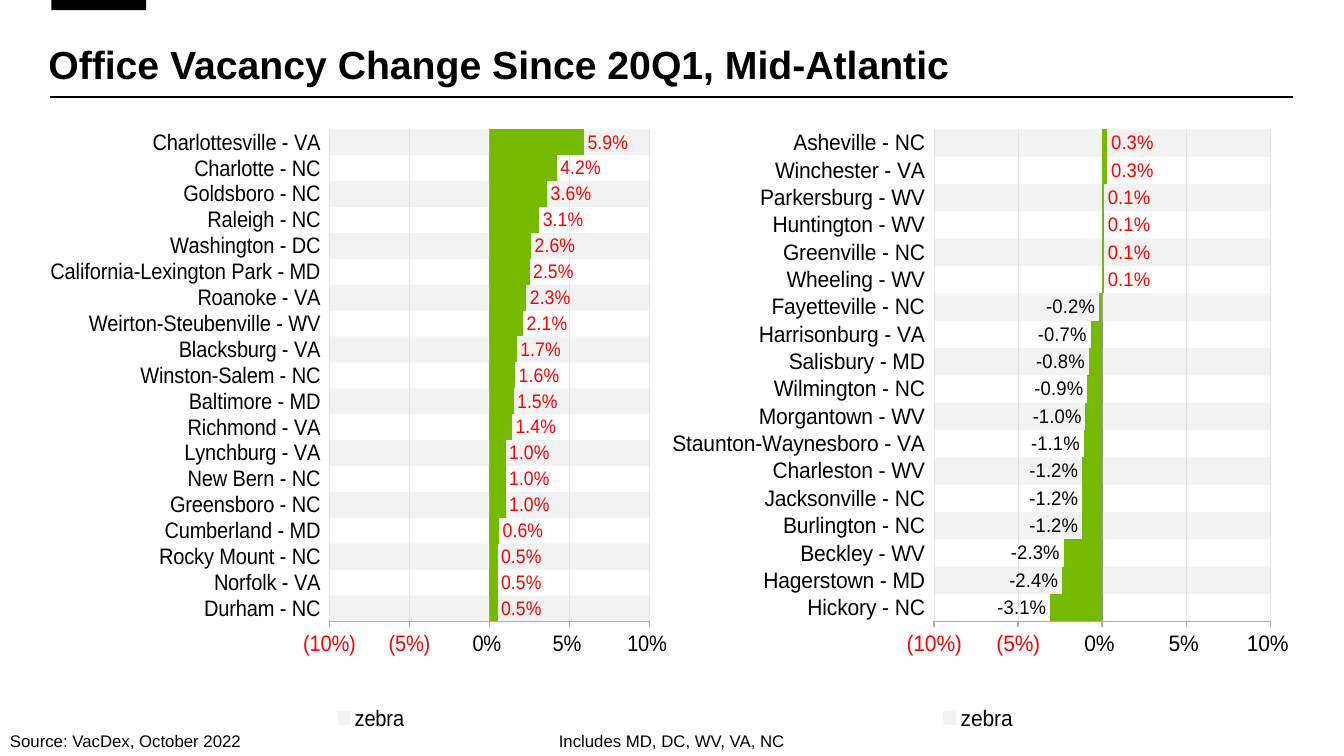
import copy
from dataclasses import dataclass

import pptx
import pptx.chart.data
import pptx.dml.color
import pptx.enum.chart
import pptx.enum.shapes
import pptx.enum.text
import pptx.oxml
import pptx.oxml.ns
import pptx.util

Pt = pptx.util.Pt
qn = pptx.oxml.ns.qn
XL = pptx.enum.chart
FONT, BLACK, RED, GREEN, ZEBRA = "Arial", "000000", "FF0000", "75B901", "D9D9D9"
PERCENT = "0.0%"
CHART_NS = 'xmlns:c="http://schemas.openxmlformats.org/drawingml/2006/chart"'


@dataclass
class VacancyChart:
    left: float
    label_color: str
    rows: list[tuple[str, float]]  # bottom bar first


@dataclass
class Footer:
    left: float
    text: str
    align: pptx.enum.text.PP_ALIGN


CHARTS = [
    VacancyChart(36, RED, [
        ("Durham - NC", 0.005), ("Norfolk - VA", 0.005), ("Rocky Mount - NC", 0.005),
        ("Cumberland - MD", 0.006), ("Greensboro - NC", 0.01), ("New Bern - NC", 0.01),
        ("Lynchburg - VA", 0.01), ("Richmond - VA", 0.014), ("Baltimore - MD", 0.015),
        ("Winston-Salem - NC", 0.016), ("Blacksburg - VA", 0.017),
        ("Weirton-Steubenville - WV", 0.021), ("Roanoke - VA", 0.023),
        ("California-Lexington Park - MD", 0.025), ("Washington - DC", 0.026),
        ("Raleigh - NC", 0.031), ("Goldsboro - NC", 0.036), ("Charlotte - NC", 0.042),
        ("Charlottesville - VA", 0.059)]),
    VacancyChart(480.24, BLACK, [
        ("Hickory - NC", -0.031), ("Hagerstown - MD", -0.024), ("Beckley - WV", -0.023),
        ("Burlington - NC", -0.012), ("Jacksonville - NC", -0.012),
        ("Charleston - WV", -0.012), ("Staunton-Waynesboro - VA", -0.011),
        ("Morgantown - WV", -0.01), ("Wilmington - NC", -0.009), ("Salisbury - MD", -0.008),
        ("Harrisonburg - VA", -0.007), ("Fayetteville - NC", -0.002),
        ("Wheeling - WV", 0.001), ("Greenville - NC", 0.001), ("Huntington - WV", 0.001),
        ("Parkersburg - WV", 0.001), ("Winchester - VA", 0.003), ("Asheville - NC", 0.003)]),
]
FOOTERS = [
    Footer(0, "Source: VacDex, October 2022", pptx.enum.text.PP_ALIGN.LEFT),
    Footer(357.12, "Includes MD, DC, WV, VA, NC", pptx.enum.text.PP_ALIGN.CENTER),
]


def rgb(color: str) -> pptx.dml.color.RGBColor:
    return pptx.dml.color.RGBColor.from_string(color)


def set_font(font, size: float, color: str = BLACK, bold: bool = False) -> None:
    font.name, font.size, font.bold = FONT, Pt(size), bold
    font.color.rgb = rgb(color)


def set_line(line, color: str, width: float) -> None:
    line.color.rgb = rgb(color)
    line.width = Pt(width)


def format_axes(chart) -> None:
    cat, val = chart.category_axis, chart.value_axis
    cat.tick_label_position = XL.XL_TICK_LABEL_POSITION.LOW
    cat.major_tick_mark = XL.XL_TICK_MARK.NONE
    cat.has_major_gridlines = False
    set_line(cat.format.line, "898989", 0.5)
    val.minimum_scale, val.maximum_scale, val.major_unit = -0.1, 0.1, 0.05
    val.major_tick_mark = XL.XL_TICK_MARK.OUTSIDE
    val.tick_labels.number_format = r"#,##0%_);[Red]\(#,##0%\)"
    val.tick_labels.number_format_is_linked = False
    set_line(val.format.line, "AFABAB", 1.25)
    set_line(val.major_gridlines.format.line, "E7E6E6", 0.5)
    for axis in (cat, val):
        axis.minor_tick_mark = XL.XL_TICK_MARK.NONE
        set_font(axis.tick_labels.font, 16)


def format_series(chart, spec_color: str, values: list[float]) -> None:
    for series in chart.plots[0].series:
        series.invert_if_negative = False
        series.format.fill.solid()
    *stripes, change = chart.plots[0].series
    for series in stripes:
        series.format.fill.fore_color.rgb = rgb(ZEBRA)
        color = next(series._element.iter(qn("a:srgbClr")))
        color.append(pptx.oxml.parse_xml(
            '<a:alpha xmlns:a="http://schemas.openxmlformats.org/drawingml/2006/main" val="33000"/>'))
    change.format.fill.fore_color.rgb = rgb(GREEN)
    labels = change.data_labels
    labels.show_value = True
    labels.number_format, labels.number_format_is_linked = PERCENT, False
    labels.position = XL.XL_LABEL_POSITION.OUTSIDE_END
    set_font(labels.font, 14, spec_color)
    # Increases are always red
    if spec_color != RED:
        for i, value in enumerate(values):
            if value > 0:
                label = change.points[i].data_label
                set_font(label.font, 14, RED)
                label.position = XL.XL_LABEL_POSITION.OUTSIDE_END


def move_change_to_second_axes(chart) -> None:
    area = chart._chartSpace.find(".//" + qn("c:plotArea"))
    stripes = area.find(qn("c:barChart"))
    change = copy.deepcopy(stripes)
    stripes.remove(stripes.findall(qn("c:ser"))[2])
    for ser in change.findall(qn("c:ser"))[:2]:
        change.remove(ser)
    stripes.addnext(change)
    axes = [area.find(qn("c:catAx")), area.find(qn("c:valAx"))]
    hidden = [copy.deepcopy(axis) for axis in axes]
    ids = ["50010", "50020"]
    for ref, new_id in zip(change.findall(qn("c:axId")), ids):
        ref.set("val", new_id)
    for axis, new_id, cross_id in zip(hidden, ids, reversed(ids)):
        axis.find(qn("c:axId")).set("val", new_id)
        axis.find(qn("c:crossAx")).set("val", cross_id)
        axis.find(qn("c:delete")).set("val", "1")
        grid = axis.find(qn("c:majorGridlines"))
        if grid is not None:
            axis.remove(grid)
    hidden[1].find(qn("c:crosses")).set("val", "max")
    axes[1].addnext(hidden[1])
    hidden[1].addnext(hidden[0])


def set_plot_layout(chart, x: float, y: float, w: float, h: float) -> None:
    area = chart._chartSpace.find(".//" + qn("c:plotArea"))
    old = area.find(qn("c:layout"))
    if old is not None:
        area.remove(old)
    area.insert(0, pptx.oxml.parse_xml(
        f'<c:layout {CHART_NS}><c:manualLayout><c:layoutTarget val="inner"/>'
        '<c:xMode val="edge"/><c:yMode val="edge"/>'
        f'<c:x val="{x}"/><c:y val="{y}"/><c:w val="{w}"/><c:h val="{h}"/>'
        '</c:manualLayout></c:layout>'))


def add_legend(chart) -> None:
    chart.has_legend = True
    chart.legend.position = XL.XL_LEGEND_POSITION.BOTTOM
    chart.legend.include_in_layout = False
    set_font(chart.legend.font, 16)
    position = chart.legend._element.find(qn("c:legendPos"))
    for i in (1, 0):
        position.addnext(pptx.oxml.parse_xml(
            f'<c:legendEntry {CHART_NS}><c:idx val="{i}"/><c:delete val="1"/></c:legendEntry>'))


def add_vacancy_chart(s, item: VacancyChart) -> None:
    names, values = zip(*item.rows)
    n = len(names)
    # Every second row is striped, counted from the top
    stripe = [100_000_000 * ((n - 1 - i) % 2 == 0) for i in range(n)]
    data = pptx.chart.data.CategoryChartData()
    data.categories = names
    data.add_series("zebra", stripe)
    data.add_series("zebra", [-v for v in stripe])
    data.add_series("Vacancy Change Since 20Q1", values, PERCENT)
    chart = s.shapes.add_chart(XL.XL_CHART_TYPE.BAR_CLUSTERED, Pt(item.left), Pt(70.56),
                               Pt(444.24), Pt(454.32), data).chart
    chart.has_title = False
    set_font(chart.font, 18)
    plot = chart.plots[0]
    plot.vary_by_categories, plot.gap_width, plot.overlap = False, 0, 100
    format_axes(chart)
    format_series(chart, item.label_color, values)
    add_legend(chart)
    set_plot_layout(chart, 0.519, 0.048, 0.575, 0.774)
    move_change_to_second_axes(chart)


def add_footer(s, item: Footer) -> None:
    tf = s.shapes.add_textbox(Pt(item.left), Pt(518.4), Pt(245.52), Pt(21.6)).text_frame
    tf.word_wrap = True
    p = tf.paragraphs[0]
    p.text, p.alignment = item.text, item.align
    set_font(p.font, 12)


def main() -> None:
    prs = pptx.Presentation()
    prs.slide_width, prs.slide_height = Pt(960), Pt(540)
    s = prs.slides.add_slide(prs.slide_layouts[5])

    # Title with its tab and rule
    tab = s.shapes.add_shape(pptx.enum.shapes.MSO_SHAPE.RECTANGLE,
                             Pt(36.72), Pt(0), Pt(67.68), Pt(7.2))
    tab.shadow.inherit = False
    tab.fill.solid()
    tab.fill.fore_color.rgb = rgb(BLACK)
    tab.line.fill.background()
    rule = s.shapes.add_connector(pptx.enum.shapes.MSO_CONNECTOR.STRAIGHT,
                                  Pt(36), Pt(69.12), Pt(923.76), Pt(69.12))
    set_line(rule.line, BLACK, 1.5)
    rule._element.spPr.append(pptx.oxml.parse_xml(
        '<a:effectLst xmlns:a="http://schemas.openxmlformats.org/drawingml/2006/main"/>'))
    title = s.shapes.title
    title.left, title.top, title.width, title.height = Pt(27.36), Pt(28.8), Pt(896.4), Pt(63.36)
    tf = title.text_frame
    tf.vertical_anchor = pptx.enum.text.MSO_ANCHOR.TOP
    p = tf.paragraphs[0]
    p.text = "Office Vacancy Change Since 20Q1, Mid-Atlantic"
    p.alignment, p.line_spacing = pptx.enum.text.PP_ALIGN.LEFT, 0.9
    set_font(p.font, 28, bold=True)

    # Charts and footers
    for item in CHARTS:
        add_vacancy_chart(s, item)
    for footer in FOOTERS:
        add_footer(s, footer)
    prs.save("out.pptx")


if __name__ == "__main__":
    main()
